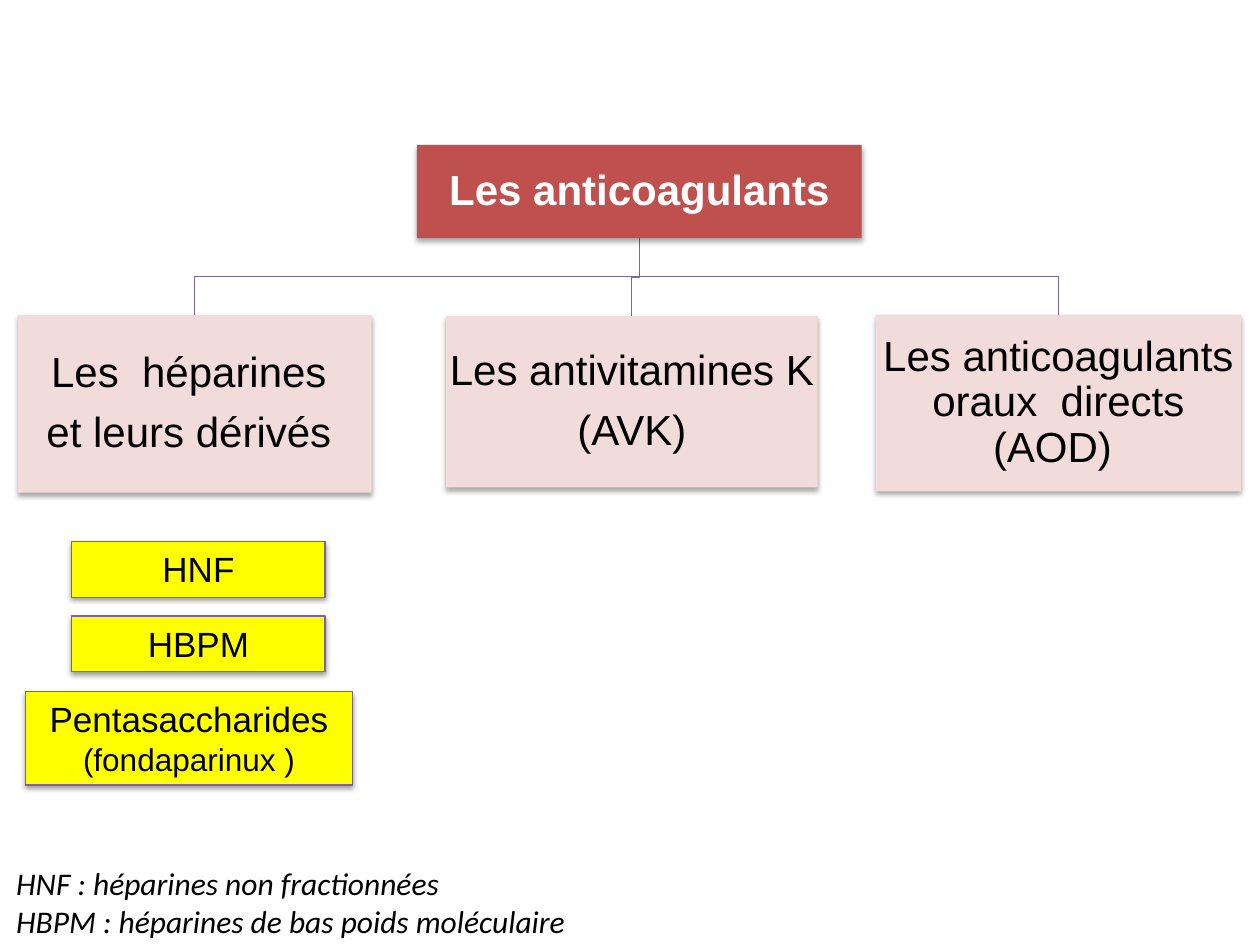
from lxml.etree import SubElement
from pptx import Presentation
from pptx.dml.color import RGBColor
from pptx.enum.shapes import MSO_SHAPE
from pptx.enum.text import MSO_ANCHOR, MSO_AUTO_SIZE, PP_ALIGN
from pptx.oxml.ns import qn
from pptx.util import Inches, Pt

WHITE = RGBColor(0xFF, 0xFF, 0xFF)
BLACK = RGBColor(0, 0, 0)
RED = RGBColor(0xC0, 0x50, 0x4D)
PINK = RGBColor(0xF2, 0xDC, 0xDB)
YELLOW = RGBColor(0xFF, 0xFF, 0x00)
BRANCH_PURPLE = RGBColor(0x80, 0x64, 0xA2)
BORDER_PURPLE = RGBColor(0x7D, 0x60, 0xA0)

ROOT = ("Les anticoagulants", (3.31, 1.15, 3.53, 0.74))
CLASSES = [
    ("Les  héparines \net leurs dérivés ", (0.14, 2.5, 2.81, 1.41)),
    ("Les antivitamines K\n(AVK)", (3.54, 2.51, 2.95, 1.36)),
    ("Les anticoagulants oraux  directs (AOD) ", (6.95, 2.5, 2.9, 1.4)),
]
HEPARINS = [
    ([("HNF", 20)], (0.57, 4.3, 2.01, 0.44)),
    ([("HBPM", 20)], (0.57, 4.89, 2.01, 0.44)),
    ([("Pentasaccharides ", 20), ("(fondaparinux )", 18)], (0.2, 5.49, 2.6, 0.74)),
]
LEGEND = "HNF : héparines non fractionnées\nHBPM : héparines de bas poids moléculaire"


def format_font(font, size, color, name="Arial", bold=False, italic=False):
    font.name = name
    font.size = Pt(size)
    font.color.rgb = color
    font.bold = bold
    font.italic = italic


def add_shadow(shape, distance, opacity):
    shape.shadow.inherit = False
    effects = shape._element.spPr.find(qn("a:effectLst"))
    shadow = SubElement(effects, qn("a:outerShdw"), blurRad=str(Pt(3.1)),
                        dist=str(Pt(distance)), dir="5400000", rotWithShape="0")
    tint = SubElement(shadow, qn("a:srgbClr"), val="000000")
    SubElement(tint, qn("a:alpha"), val=str(opacity * 1000))


def add_box(slide, box, fill, distance, opacity):
    rectangle = slide.shapes.add_shape(MSO_SHAPE.RECTANGLE, *map(Inches, box))
    rectangle.fill.solid()
    rectangle.fill.fore_color.rgb = fill
    rectangle.line.fill.background()
    add_shadow(rectangle, distance, opacity)
    rectangle.text_frame.word_wrap = True
    return rectangle


def add_node(slide, box, text, fill, color, bold=False):
    frame = add_box(slide, box, fill, 1.8, 35).text_frame
    frame.margin_left = frame.margin_right = Inches(0.02)
    frame.margin_top = frame.margin_bottom = Inches(0.02)
    frame.vertical_anchor = MSO_ANCHOR.MIDDLE
    frame.text = text
    for paragraph in frame.paragraphs:
        paragraph.alignment = PP_ALIGN.CENTER
        paragraph.line_spacing = 0.9
        paragraph.space_after = Pt(8.4)
        for run in paragraph.runs:
            format_font(run.font, 24, color, bold=bold)


def add_branch(slide, parent, child):
    left, top, width, height = parent
    start_x, start_y = left + width / 2, top + height
    end_x, end_y = child[0] + child[2] / 2, child[1]
    middle_y = (start_y + end_y) / 2
    outline = slide.shapes.build_freeform(Inches(start_x), Inches(start_y))
    corners = [(start_x, middle_y), (end_x, middle_y), (end_x, end_y)]
    outline.add_line_segments([(Inches(x), Inches(y)) for x, y in corners], close=False)
    branch = outline.convert_to_shape()
    branch.fill.background()
    branch.line.color.rgb = BRANCH_PURPLE
    branch.line.width = Pt(0.75)
    branch.shadow.inherit = False


def add_tree(slide):
    root_text, root_box = ROOT
    for _, class_box in reversed(CLASSES):
        add_branch(slide, root_box, class_box)
    add_node(slide, root_box, root_text, RED, WHITE, bold=True)
    for class_text, class_box in CLASSES:
        add_node(slide, class_box, class_text, PINK, BLACK)


def add_legend(slide, box):
    frame = slide.shapes.add_textbox(*map(Inches, box)).text_frame
    frame.word_wrap = True
    frame.auto_size = MSO_AUTO_SIZE.SHAPE_TO_FIT_TEXT
    frame.text = LEGEND
    for paragraph in frame.paragraphs:
        for run in paragraph.runs:
            format_font(run.font, 18, BLACK, name="Calibri", italic=True)


def add_heparin(slide, box, parts):
    heparin = add_box(slide, box, YELLOW, 1.6, 38)
    heparin.line.color.rgb = BORDER_PURPLE
    heparin.line.width = Pt(0.75)
    frame = heparin.text_frame
    frame.auto_size = MSO_AUTO_SIZE.SHAPE_TO_FIT_TEXT
    frame.vertical_anchor = MSO_ANCHOR.TOP
    paragraph = frame.paragraphs[0]
    paragraph.alignment = PP_ALIGN.CENTER
    for text, size in parts:
        run = paragraph.add_run()
        run.text = text
        format_font(run.font, size, BLACK)


def main():
    presentation = Presentation()
    presentation.slide_width = Inches(10)
    presentation.slide_height = Inches(7.5)
    slide = presentation.slides.add_slide(presentation.slide_layouts[6])
    add_tree(slide)
    add_legend(slide, (0.03, 6.81, 6.57, 0.71))
    for parts, box in HEPARINS:
        add_heparin(slide, box, parts)
    presentation.save("out.pptx")


if __name__ == "__main__":
    main()
